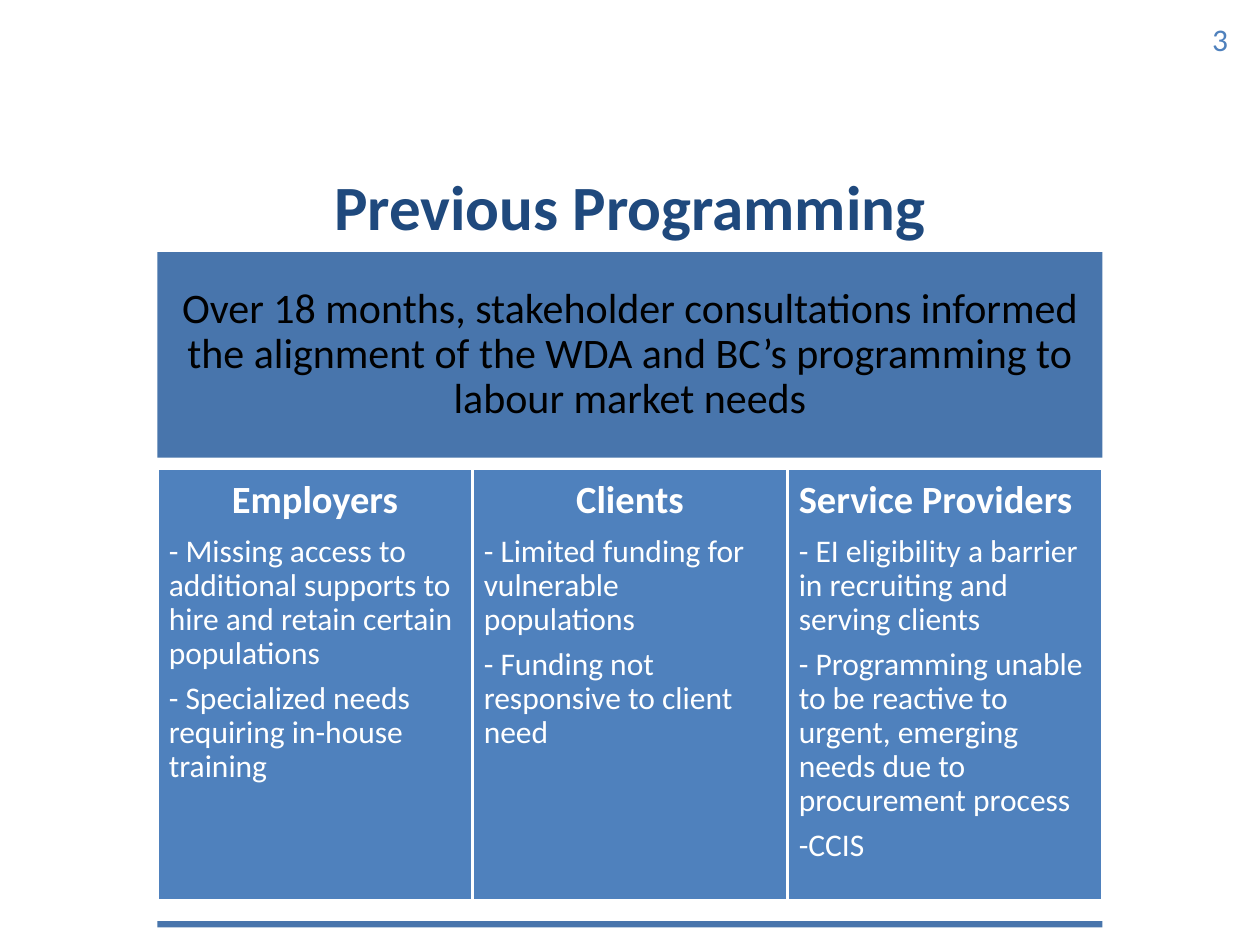
import pptx
import pptx.util
import pptx.dml.color
import pptx.enum.shapes
import pptx.enum.text

Pt = pptx.util.Pt
RGB = pptx.dml.color.RGBColor.from_string
ALIGN = pptx.enum.text.PP_ALIGN
ANCHOR = pptx.enum.text.MSO_ANCHOR
RECT = pptx.enum.shapes.MSO_SHAPE.RECTANGLE

PAGE = "3"
TITLE = "Previous Programming"
BANNER = (
    "Over 18 months, stakeholder consultations informed the alignment "
    "of the WDA and BC’s programming to labour market needs"
)
GROUPS = [
    ("Employers", ALIGN.CENTER, [
        "- Missing access to additional supports to hire and retain certain populations",
        "- Specialized needs requiring in-house training",
    ]),
    ("Clients", ALIGN.CENTER, [
        "- Limited funding for vulnerable populations",
        "- Funding not responsive to client need",
    ]),
    ("Service Providers", ALIGN.LEFT, [
        "- EI eligibility a barrier in recruiting and serving clients",
        "- Programming unable to be reactive to urgent, emerging needs due to procurement process",
        "-CCIS",
    ]),
]

THEME = {
    "font": "Calibri",
    "navy": "1F497D", "band": "4875AC", "blue": "4F81BD",
    "white": "FFFFFF", "black": "000000",
    "title": 36, "lead": 24, "head": 22, "body": 18,
}

LEFT, WIDTH = 90, 540
COL = WIDTH / len(GROUPS)


def write(frame, text, size="body", color="white", bold=False,
          align=ALIGN.LEFT, gap=0, line=None):
    para = frame.paragraphs[0]
    if para.runs:
        para = frame.add_paragraph()
    para.alignment = align
    para.line_spacing = line
    para.space_after = Pt(THEME[size] * gap)
    run = para.add_run()
    run.text = text
    run.font.name = THEME["font"]
    run.font.size = Pt(THEME[size])
    run.font.bold = bold
    run.font.color.rgb = RGB(THEME[color])


def setup(shape, anchor, pad):
    frame = shape.text_frame
    frame.word_wrap = True
    frame.vertical_anchor = anchor
    frame.margin_left = frame.margin_right = Pt(pad)
    frame.margin_top = frame.margin_bottom = Pt(pad)
    return frame


def panel(slide, left, top, width, height, fill, line=None):
    shape = slide.shapes.add_shape(RECT, Pt(left), Pt(top), Pt(width), Pt(height))
    shape.shadow.inherit = False
    shape.fill.solid()
    shape.fill.fore_color.rgb = RGB(THEME[fill])
    if line:
        shape.line.color.rgb = RGB(THEME[line])
        shape.line.width = Pt(2)
    else:
        shape.line.fill.background()
    return shape


def label(slide, left, top, width, height, pad):
    box = slide.shapes.add_textbox(Pt(left), Pt(top), Pt(width), Pt(height))
    return setup(box, ANCHOR.TOP, pad)


def main():
    deck = pptx.Presentation()
    deck.slide_width, deck.slide_height = Pt(720), Pt(540)
    slide = deck.slides.add_slide(deck.slide_layouts[6])

    frame = label(slide, 648, 7.2, 64.8, 28.8, 4)
    frame.margin_right = Pt(11)
    write(frame, PAGE, color="blue", align=ALIGN.RIGHT)

    frame = label(slide, 36, 90, 648, 75, 6)
    write(frame, TITLE, size="title", color="navy", bold=True, align=ALIGN.CENTER)

    band = panel(slide, LEFT, 144, WIDTH, 117.5, "band")
    write(setup(band, ANCHOR.MIDDLE, 7.2), BANNER, size="lead", color="black",
          align=ALIGN.CENTER, gap=0.35, line=0.9)

    for i, (head, align, notes) in enumerate(GROUPS):
        card = panel(slide, LEFT + i * COL, 267.8, COL, 247, "blue", "white")
        frame = setup(card, ANCHOR.TOP, 6.5)
        write(frame, head, size="head", bold=True, align=align, gap=0.35, line=0.9)
        for note in notes:
            write(frame, note, gap=0.35, line=0.9)

    panel(slide, LEFT, 526.3, WIDTH, 3.6, "band")
    deck.save("out.pptx")


if __name__ == "__main__":
    main()
